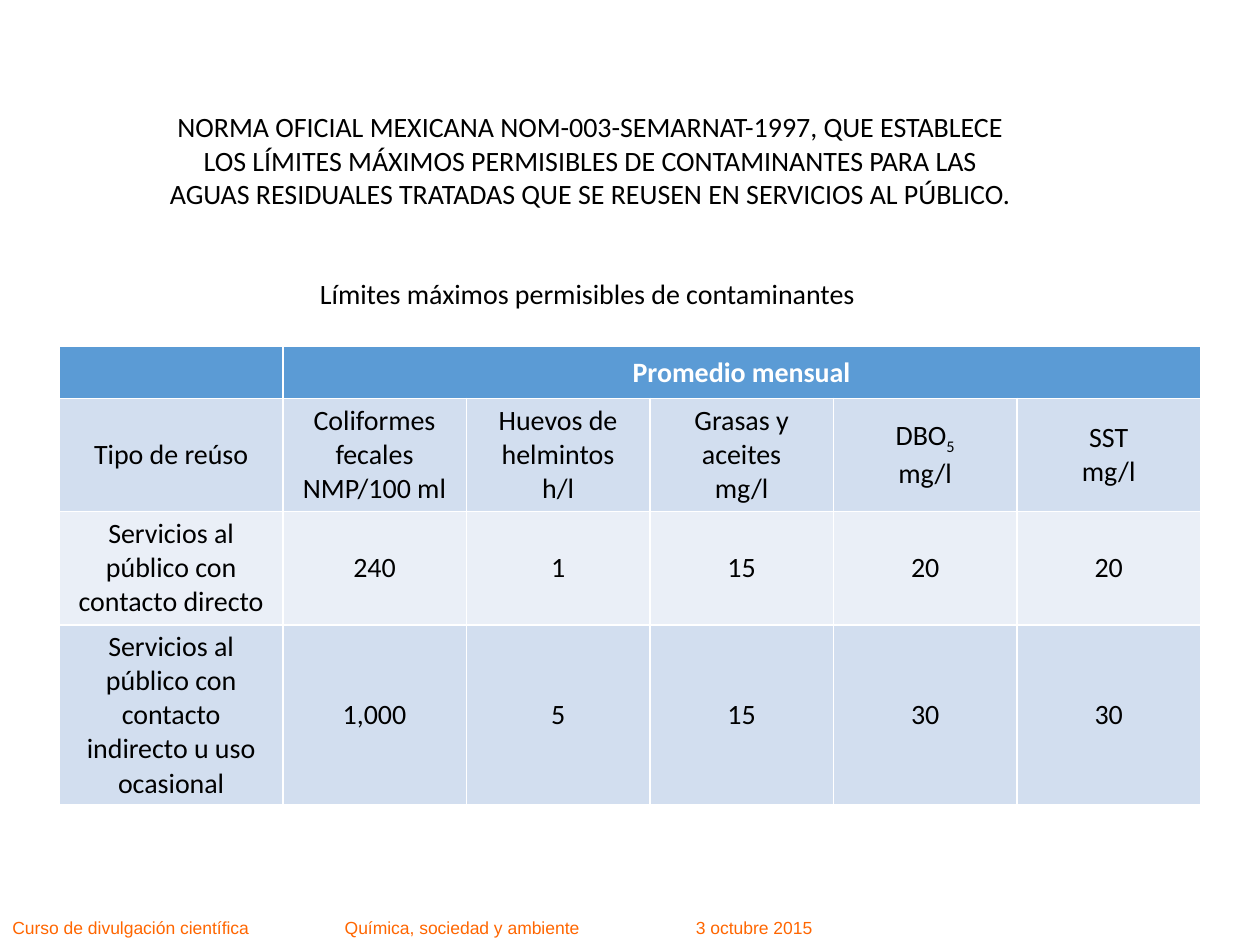
"""Build the slide on wastewater limits of NOM-003-SEMARNAT-1997."""
from dataclasses import dataclass

from lxml import etree
from pptx import Presentation
from pptx import util as u
from pptx.dml.color import RGBColor
from pptx.enum import text
from pptx.oxml import ns

BLACK = RGBColor(0x00, 0x00, 0x00)
WHITE = RGBColor(0xFF, 0xFF, 0xFF)
ORANGE = RGBColor(0xFF, 0x66, 0x00)
BLUE = RGBColor(0x5B, 0x9B, 0xD5)
PALE = RGBColor(0xD2, 0xDE, 0xEF)
LIGHT = RGBColor(0xEA, 0xEF, 0xF7)

CENTER = text.PP_ALIGN.CENTER
LEFT = text.PP_ALIGN.LEFT


@dataclass
class Box:
    left: float
    top: float
    width: float
    height: float

    def place(self, shape) -> None:
        shape.left, shape.top = u.Cm(self.left), u.Cm(self.top)
        shape.width, shape.height = u.Cm(self.width), u.Cm(self.height)


@dataclass
class Style:
    size: int = 16
    face: str = "Calibri"
    color: RGBColor = BLACK
    bold: bool = False
    align: text.PP_ALIGN = CENTER


@dataclass
class Row:
    height: float
    fill: RGBColor
    cells: list[str]
    style: Style


BODY = Style()
ROWS = [
    Row(1.04, BLUE, ["", "Promedio mensual", "", "", "", ""],
        Style(color=WHITE, bold=True)),
    Row(2.28, PALE, ["Tipo de reúso", "Coliformes fecales\nNMP/100 ml",
                     "Huevos de helmintos\nh/l", "Grasas y aceites\nmg/l",
                     "DBO_5\nmg/l", "SST\nmg/l"], BODY),
    Row(2.29, LIGHT, ["Servicios al público con contacto directo",
                      "240", "1", "15", "20", "20"], BODY),
    Row(3.63, PALE, ["Servicios al público con contacto indirecto u uso ocasional",
                     "1,000", "5", "15", "30", "30"], BODY),
]
COLS = [4.5] + [3.7] * 5


def write(frame, words: str, style: Style, tabs: tuple[float, ...] = ()) -> None:
    """Fill a frame, one paragraph a line; an underscore starts a subscript."""
    for i, line in enumerate(words.split("\n")):
        para = frame.paragraphs[0] if i == 0 else frame.add_paragraph()
        para.alignment = style.align
        base, _, sub = line.partition("_")
        para.add_run().text = base
        if sub:
            run = para.add_run()
            run.text = sub
            run.font._element.set("baseline", "-25000")
        if tabs:
            stops = etree.SubElement(para._p.get_or_add_pPr(), ns.qn("a:tabLst"))
            for pos in tabs:
                etree.SubElement(stops, ns.qn("a:tab"), pos=str(u.Cm(pos)), algn="l")
        font = para.font
        font.size, font.name, font.bold = u.Pt(style.size), style.face, style.bold
        font.color.rgb = style.color


def add_title(slide, box: Box, words: str) -> None:
    """Move and fill the title placeholder."""
    title = slide.shapes.title
    box.place(title)
    frame = title.text_frame
    frame.vertical_anchor = text.MSO_ANCHOR.TOP
    frame.auto_size = text.MSO_AUTO_SIZE.SHAPE_TO_FIT_TEXT
    write(frame, words, BODY)


def add_text(slide, box: Box, words: str, style: Style, wrap: bool,
             tabs: tuple[float, ...] = ()) -> None:
    """Add a text box."""
    shape = slide.shapes.add_textbox(0, 0, 0, 0)
    box.place(shape)
    frame = shape.text_frame
    frame.word_wrap = wrap
    frame.auto_size = text.MSO_AUTO_SIZE.SHAPE_TO_FIT_TEXT
    write(frame, words, style, tabs)


def add_grid(slide, left: float, top: float) -> None:
    """Add the table of limits."""
    high = sum(row.height for row in ROWS)
    table = slide.shapes.add_table(len(ROWS), len(COLS), u.Cm(left), u.Cm(top),
                                   u.Cm(sum(COLS)), u.Cm(high)).table
    for col, width in zip(table.columns, COLS):
        col.width = u.Cm(width)
    for r, row in enumerate(ROWS):
        table.rows[r].height = u.Cm(row.height)
        for c, words in enumerate(row.cells):
            cell = table.cell(r, c)
            cell.margin_top = cell.margin_bottom = u.Cm(0.08)
            cell.vertical_anchor = text.MSO_ANCHOR.MIDDLE
            cell.fill.solid()
            cell.fill.fore_color.rgb = row.fill
            if words:
                write(cell.text_frame, words, row.style)
    table.cell(0, 1).merge(table.cell(0, len(COLS) - 1))


def main() -> None:
    """Build and save the slide."""
    deck = Presentation()
    deck.slide_width, deck.slide_height = u.Cm(25.4), u.Cm(19.05)
    slide = deck.slides.add_slide(deck.slide_layouts[5])
    add_text(slide, Box(0, 18.36, 18.75, 0.69),
             "Curso de divulgación científica\tQuímica, sociedad y ambiente\t3 octubre 2015",
             Style(10, "Arial", ORANGE, align=LEFT), True, (6.7, 13.78))
    add_grid(slide, 1.2, 6.99)
    add_title(slide, Box(3.05, 2.08, 17.7, 2.31),
              "NORMA OFICIAL MEXICANA NOM-003-SEMARNAT-1997, QUE ESTABLECE "
              "LOS LÍMITES MÁXIMOS PERMISIBLES DE CONTAMINANTES PARA LAS "
              "AGUAS RESIDUALES TRATADAS QUE SE REUSEN EN SERVICIOS AL PÚBLICO.")
    add_text(slide, Box(6.2, 5.46, 11.4, 0.94),
             "Límites máximos permisibles de contaminantes", Style(align=LEFT), False)
    deck.save("out.pptx")


if __name__ == "__main__":
    main()
